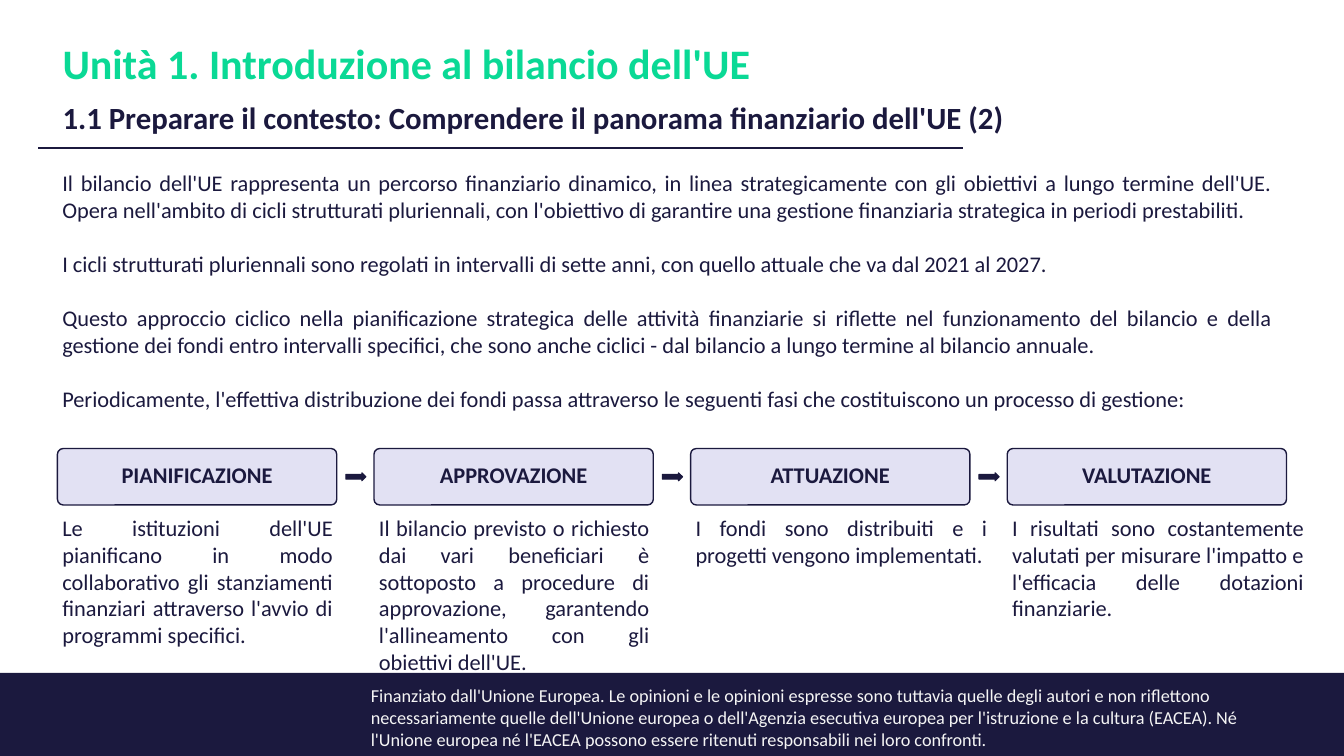
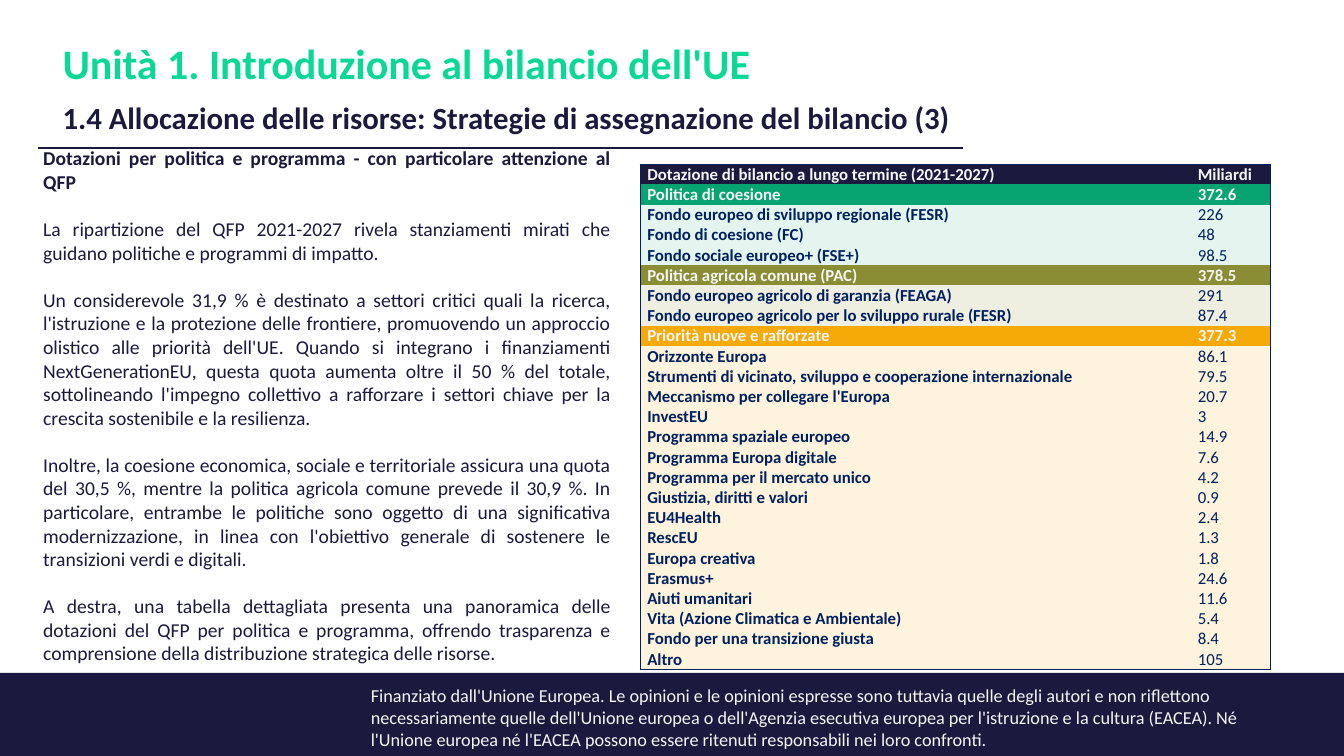
from pptx import Presentation
from pptx.dml.color import RGBColor
from pptx.enum.shapes import MSO_CONNECTOR as Connector, MSO_SHAPE as Shape
from pptx.enum.text import MSO_ANCHOR as Anchor, MSO_AUTO_SIZE as AutoSize, PP_ALIGN as Align
from pptx.oxml import parse_xml
from pptx.oxml.ns import nsdecls
from pptx.util import Inches, Pt

# Shared look
FONT = "Calibri"
NAVY, GREEN, PALE, LILAC, BLUE = "1B193E", "0AD995", "F5F5F5", "E2E1F3", "002060"
NO_TABLE_STYLE = "{2D5ABB26-0587-4C30-8999-92F81FD0307C}"
UNIT = "Unità 1. Introduzione al bilancio dell'UE"
DISCLAIMER = (
    "Finanziato dall'Unione Europea. Le opinioni e le opinioni espresse sono tuttavia quelle "
    "degli autori e non riflettono necessariamente quelle dell'Unione europea o dell'Agenzia "
    "esecutiva europea per l'istruzione e la cultura (EACEA). Né l'Unione europea né l'EACEA "
    "possono essere ritenuti responsabili nei loro confronti."
)


def colour(hex_code):
    return RGBColor.from_string(hex_code)


def write(frame, lines, align=Align.LEFT, gap=0, spacing=None):
    """Fill a frame; each line is (text, size, hex colour, bold)."""
    frame.word_wrap = True
    for number, (text, size, ink, bold) in enumerate(lines):
        paragraph = frame.paragraphs[0] if number == 0 else frame.add_paragraph()
        paragraph.alignment = align
        paragraph.space_before = Pt(gap if number else 0)
        if spacing:
            paragraph.line_spacing = spacing
        run = paragraph.add_run()
        run.text = text
        run.font.name, run.font.size, run.font.bold = FONT, Pt(size), bold
        run.font.color.rgb = colour(ink)


prs = Presentation()
prs.slide_width, prs.slide_height = Inches(13.33), Inches(7.5)
W, H = prs.slide_width, prs.slide_height
band_top = int(H * 0.89)
text_left = Inches(0.52)

# Title, rule and footer band on both slides
subtitles = [
    "1.1 Preparare il contesto: Comprendere il panorama finanziario dell'UE (2)",
    "1.4 Allocazione delle risorse: Strategie di assegnazione del bilancio (3)",
]
slides = []
for subtitle in subtitles:
    slide = prs.slides.add_slide(prs.slide_layouts[5])
    slides.append(slide)

    title = slide.shapes.title
    title.left, title.top, title.width, title.height = text_left, Inches(0.5), Inches(9.98), Inches(0.9)
    title.text_frame.auto_size = AutoSize.NONE
    title.text_frame.vertical_anchor = Anchor.BOTTOM
    write(title.text_frame, [(UNIT, 30, GREEN, True), (subtitle, 22, NAVY, True)], gap=10, spacing=0.9)

    band = slide.shapes.add_shape(Shape.RECTANGLE, 0, band_top, W, H - band_top)
    band.shadow.inherit = False
    band.fill.solid()
    band.fill.fore_color.rgb = colour(NAVY)
    band.line.fill.background()

    disclaimer = slide.shapes.add_textbox(Inches(3.58), Inches(6.74), Inches(8.84), Inches(0.76))
    write(disclaimer.text_frame, [(DISCLAIMER, 13, PALE, False)])

    rule = slide.shapes.add_connector(
        Connector.STRAIGHT, Inches(0.38), Inches(1.47), Inches(9.55), Inches(1.47))
    rule.line.color.rgb = colour(NAVY)
    rule.line.width = Pt(1)
    rule._element.spPr.append(parse_xml(f"<a:effectLst {nsdecls('a')}/>"))

cycle_slide, budget_slide = slides

# Slide 1: introduction
cycle_intro = [
    "Il bilancio dell'UE rappresenta un percorso finanziario dinamico, in linea strategicamente con "
    "gli obiettivi a lungo termine dell'UE. Opera nell'ambito di cicli strutturati pluriennali, con "
    "l'obiettivo di garantire una gestione finanziaria strategica in periodi prestabiliti.",
    "I cicli strutturati pluriennali sono regolati in intervalli di sette anni, con quello attuale "
    "che va dal 2021 al 2027.",
    "Questo approccio ciclico nella pianificazione strategica delle attività finanziarie si riflette "
    "nel funzionamento del bilancio e della gestione dei fondi entro intervalli specifici, che sono "
    "anche ciclici - dal bilancio a lungo termine al bilancio annuale.",
    "Periodicamente, l'effettiva distribuzione dei fondi passa attraverso le seguenti fasi che "
    "costituiscono un processo di gestione:",
]
intro = cycle_slide.shapes.add_textbox(text_left, Inches(1.63), Inches(12.2), Inches(3.06))
write(intro.text_frame, [(text, 16, NAVY, False) for text in cycle_intro], Align.JUSTIFY, gap=19.5)

# Slide 1: four phases, one per column, joined by arrows
phases = [
    ("PIANIFICAZIONE", 2.88,
     "Le istituzioni dell'UE pianificano in modo collaborativo gli stanziamenti finanziari "
     "attraverso l'avvio di programmi specifici."),
    ("APPROVAZIONE", 2.88,
     "Il bilancio previsto o richiesto dai vari beneficiari è sottoposto a procedure di "
     "approvazione, garantendo l'allineamento con gli obiettivi dell'UE."),
    ("ATTUAZIONE", 3.09,
     "I fondi sono distribuiti e i progetti vengono implementati."),
    ("VALUTAZIONE", 3.09,
     "I risultati sono costantemente valutati per misurare l'impatto e l'efficacia delle "
     "dotazioni finanziarie."),
]
column_pitch, phase_width = Inches(3.14), Inches(2.77)
for column, (phase, detail_width, detail) in enumerate(phases):
    left = Inches(0.57) + column * column_pitch
    parts = [(Shape.ROUNDED_RECTANGLE, left, 4.45, phase_width, 0.56, 0.1, LILAC, 1)]
    if column < len(phases) - 1:
        arrow_left = left + phase_width + Inches(0.09)
        parts.append((Shape.RIGHT_ARROW, arrow_left, 4.69, Inches(0.2), 0.08, 0.6, NAVY, 0.75))
    for kind, x, top, width, height, adjustment, fill, outline in parts:
        part = cycle_slide.shapes.add_shape(kind, x, Inches(top), width, Inches(height))
        part.shadow.inherit = False
        part.adjustments[0] = adjustment
        part.fill.solid()
        part.fill.fore_color.rgb = colour(fill)
        part.line.color.rgb = colour(NAVY)
        part.line.width = Pt(outline)
        if kind == Shape.ROUNDED_RECTANGLE:
            part.text_frame.vertical_anchor = Anchor.MIDDLE
            write(part.text_frame, [(phase, 16, NAVY, True)], Align.CENTER, spacing=0.9)

    note = cycle_slide.shapes.add_textbox(
        text_left + column * column_pitch, Inches(5.05), Inches(detail_width), Inches(1.45))
    write(note.text_frame, [(detail, 16, NAVY, False)], Align.JUSTIFY)

# Slide 2: budget table, each group with its strong and pale fill
budget_groups = [
    (NAVY, None, [("Dotazione di bilancio a lungo termine (2021-2027)", "Miliardi")]),
    ("07A370", "E4F5EF", [
        ("Politica di coesione", "372.6"),
        ("Fondo europeo di sviluppo regionale (FESR)", "226"),
        ("Fondo di coesione (FC)", "48"),
        ("Fondo sociale europeo+ (FSE+)", "98.5"),
    ]),
    ("8B8D35", "EEEEE1", [
        ("Politica agricola comune (PAC)", "378.5"),
        ("Fondo europeo agricolo di garanzia (FEAGA)", "291"),
        ("Fondo europeo agricolo per lo sviluppo rurale (FESR)", "87.4"),
    ]),
    ("F6AA07", "FEF3DC", [
        ("Priorità nuove e rafforzate", "377.3"),
        ("Orizzonte Europa", "86.1"),
        ("Strumenti di vicinato, sviluppo e cooperazione internazionale", "79.5"),
        ("Meccanismo per collegare l'Europa", "20.7"),
        ("InvestEU", "3"),
        ("Programma spaziale europeo", "14.9"),
        ("Programma Europa digitale", "7.6"),
        ("Programma per il mercato unico", "4.2"),
        ("Giustizia, diritti e valori", "0.9"),
        ("EU4Health", "2.4"),
        ("RescEU", "1.3"),
        ("Europa creativa", "1.8"),
        ("Erasmus+", "24.6"),
        ("Aiuti umanitari", "11.6"),
        ("Vita (Azione Climatica e Ambientale)", "5.4"),
        ("Fondo per una transizione giusta", "8.4"),
        ("Altro", "105"),
    ]),
]
budget_rows = [
    (entry, strong if position == 0 else pale, position == 0)
    for strong, pale, entries in budget_groups
    for position, entry in enumerate(entries)
]
last_row = len(budget_rows) - 1
row_height = Inches(0.2)
budget = budget_slide.shapes.add_table(
    len(budget_rows), 2, Inches(6.35), Inches(1.63), Inches(6.25), row_height * len(budget_rows)).table
budget._tbl.tblPr.find("{*}tableStyleId").text = NO_TABLE_STYLE
budget.columns[0].width, budget.columns[1].width = Inches(5.46), Inches(0.79)

for row, (entry, fill, is_heading) in enumerate(budget_rows):
    budget.rows[row].height = row_height
    for column, text in enumerate(entry):
        cell = budget.cell(row, column)
        cell.margin_left = cell.margin_right = Inches(0.07)
        cell.margin_top = cell.margin_bottom = 0
        # Only the outer frame of the table is drawn
        edges = [("lnL", column == 0), ("lnR", column == 1), ("lnT", row == 0), ("lnB", row == last_row)]
        for edge, is_outer in edges:
            if is_outer:
                cell._tc.get_or_add_tcPr().append(parse_xml(
                    f'<a:{edge} {nsdecls("a")} w="{Pt(1)}"><a:solidFill>'
                    f'<a:srgbClr val="{BLUE}"/></a:solidFill></a:{edge}>'))
        cell.fill.solid()
        cell.fill.fore_color.rgb = colour(fill)
        ink = PALE if is_heading else BLUE
        write(cell.text_frame, [(text, 12, ink, is_heading or column == 0)])

# Slide 2: commentary
allocation_heading = "Dotazioni per politica e programma - con particolare attenzione al QFP"
allocation_notes = [
    "La ripartizione del QFP 2021-2027 rivela stanziamenti mirati che guidano politiche e programmi "
    "di impatto.",
    "Un considerevole 31,9 % è destinato a settori critici quali la ricerca, l'istruzione e la "
    "protezione delle frontiere, promuovendo un approccio olistico alle priorità dell'UE. Quando si "
    "integrano i finanziamenti NextGenerationEU, questa quota aumenta oltre il 50 % del totale, "
    "sottolineando l'impegno collettivo a rafforzare i settori chiave per la crescita sostenibile e "
    "la resilienza.",
    "Inoltre, la coesione economica, sociale e territoriale assicura una quota del 30,5 %, mentre la "
    "politica agricola comune prevede il 30,9 %. In particolare, entrambe le politiche sono oggetto "
    "di una significativa modernizzazione, in linea con l'obiettivo generale di sostenere le "
    "transizioni verdi e digitali.",
    "A destra, una tabella dettagliata presenta una panoramica delle dotazioni del QFP per politica "
    "e programma, offrendo trasparenza e comprensione della distribuzione strategica delle risorse.",
]
commentary = budget_slide.shapes.add_textbox(Inches(0.33), Inches(1.4), Inches(5.83), Inches(5.28))
write(commentary.text_frame,
      [(allocation_heading, 14, NAVY, True)] + [(text, 14, NAVY, False) for text in allocation_notes],
      Align.JUSTIFY, gap=17)

prs.save("out.pptx")
